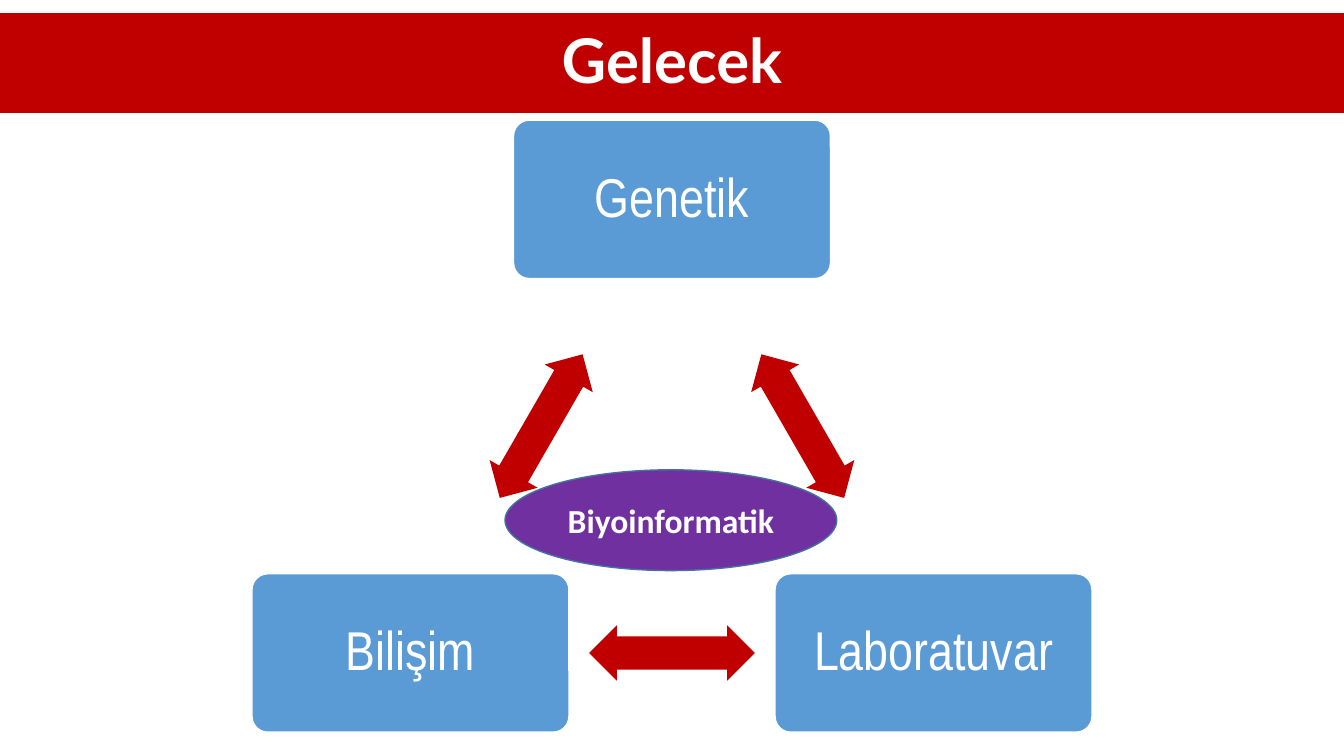
import math

from pptx import Presentation
from pptx.dml.color import RGBColor
from pptx.enum.shapes import MSO_SHAPE
from pptx.enum.text import MSO_ANCHOR, PP_ALIGN
from pptx.util import Pt

ROUNDED = MSO_SHAPE.ROUNDED_RECTANGLE
DOUBLE_ARROW = MSO_SHAPE.LEFT_RIGHT_ARROW
ELLIPSE = MSO_SHAPE.OVAL
MIDDLE = MSO_ANCHOR.MIDDLE
CENTER = PP_ALIGN.CENTER

SLIDE_WIDTH, SLIDE_HEIGHT = 960, 540
RED, BLUE, PURPLE, WHITE, OUTLINE = "C00000", "5B9BD5", "7030A0", "FFFFFF", "43739E"
TITLE_FONT = {"name": "Lato", "size": Pt(44), "bold": True}
FIELD_FONT = {"name": "Arial Narrow", "size": Pt(39), "bold": False}
CORE_FONT = {"name": "Calibri", "size": Pt(24), "bold": True}


def color(hex_string):
    return RGBColor.from_string(hex_string)


def paint(shape, fill, line=None):
    shape.fill.solid()
    shape.fill.fore_color.rgb = color(fill)
    if line:
        shape.line.color.rgb = color(line)
        shape.line.width = Pt(1)
    else:
        shape.line.fill.background()


def write(shape, text, font_format, line_spacing=1.0):
    frame = shape.text_frame
    frame.word_wrap = True
    frame.vertical_anchor = MIDDLE
    paragraph = frame.paragraphs[0]
    paragraph.alignment = CENTER
    paragraph.line_spacing = line_spacing
    run = paragraph.add_run()
    run.text = text
    for name, value in font_format.items():
        setattr(run.font, name, value)
    run.font.color.rgb = color(WHITE)


def add_centered(slide, kind, center, width, height):
    """Add a shadowless preset shape around its center point."""
    x, y = center
    shape = slide.shapes.add_shape(
        kind, Pt(x - width / 2), Pt(y - height / 2), Pt(width), Pt(height))
    shape.shadow.inherit = False
    return shape


def add_title(slide, text, left, top, width, height):
    title = slide.shapes.title
    title.left, title.top, title.width, title.height = map(Pt, (left, top, width, height))
    paint(title, RED)
    write(title, text, TITLE_FONT, 0.9)


def add_field(slide, text, center, width, height):
    field = add_centered(slide, ROUNDED, center, width, height)
    field.adjustments[0] = 0.1
    paint(field, BLUE, WHITE)
    write(field, text, FIELD_FONT, 0.9)


def add_link(slide, start, end):
    """Add a double arrow halfway between two points, turned along their line."""
    middle = ((start[0] + end[0]) / 2, (start[1] + end[1]) / 2)
    arrow = add_centered(slide, DOUBLE_ARROW, middle, 118.4, 39.6)
    arrow.adjustments[0], arrow.adjustments[1] = 0.6, 0.5
    arrow.rotation = math.degrees(math.atan2(end[1] - start[1], end[0] - start[0])) % 360
    paint(arrow, RED)


def add_cycle(slide, names, left, top, width, height):
    """Place three linked fields at the top, lower right and lower left of the box."""
    field_width, field_height = 226.4, 113.2
    first_x, last_x = left + field_width / 2, left + width - field_width / 2
    first_y, last_y = top + field_height / 2, top + height - field_height / 2
    centers = [(left + width / 2, first_y), (last_x, last_y), (first_x, last_y)]
    for index, (name, center) in enumerate(zip(names, centers)):
        add_field(slide, name, center, field_width, field_height)
        add_link(slide, center, centers[(index + 1) % len(centers)])


def add_core(slide, text, center, width, height):
    core = add_centered(slide, ELLIPSE, center, width, height)
    paint(core, PURPLE, OUTLINE)
    write(core, text, CORE_FONT)


def main():
    presentation = Presentation()
    presentation.slide_width, presentation.slide_height = Pt(SLIDE_WIDTH), Pt(SLIDE_HEIGHT)
    slide = presentation.slides.add_slide(presentation.slide_layouts[5])
    add_title(slide, "Gelecek", 0, 9.4, SLIDE_WIDTH, 71.3)
    add_cycle(slide, ["Genetik", "Laboratuvar", "Bilişim"], 180, 85.8, 600, 437.2)
    add_core(slide, "Biyoinformatik", (479.2, 371.6), 237, 72)
    presentation.save("out.pptx")


if __name__ == "__main__":
    main()
